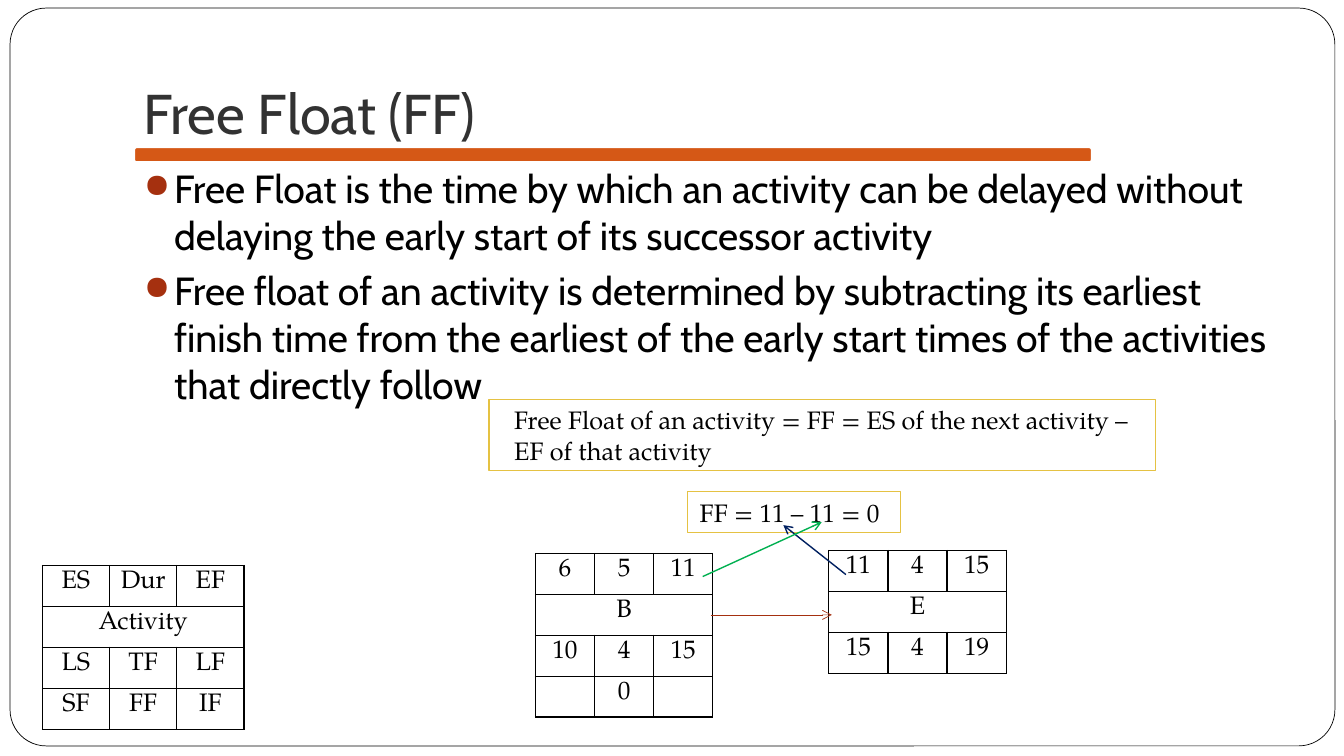
from dataclasses import dataclass

from lxml import etree
from pptx import Presentation
from pptx.dml.color import RGBColor
from pptx.enum import shapes, text
from pptx.oxml import ns, xmlchemy
from pptx.util import Inches, Pt

COLORS = {
    "black": "000000",
    "white": "FFFFFF",
    "title": "323232",
    "orange": "D55816",
    "gold": "E5C243",
    "red": "A5300F",
    "navy": "002060",
    "green": "00B050",
}
SANS = "Cabin"
SERIF = "TeX Gyre Pagella"
ROW_HEIGHT = 0.406
BULLETS = [
    "Free Float is the time by which an activity can be delayed without "
    "delaying the early start of its successor activity",
    "Free float of an activity is determined by subtracting its earliest finish time "
    "from the earliest of the early start times of the activities that directly follow",
]


@dataclass
class ActivityTable:
    left: float
    top: float
    width: float
    rows: list[list[str]]  # a row with one entry spans the whole table


@dataclass
class Formula:
    left: float
    top: float
    width: float
    height: float
    inset: float
    wording: str


@dataclass
class Arrow:
    start: tuple[float, float]
    end: tuple[float, float]
    color: str
    weight: float


TABLES = [
    ActivityTable(5.31, 5.49, 1.76, [["6", "5", "11"], ["B"], ["10", "4", "15"], ["", "0", ""]]),
    ActivityTable(0.42, 5.61, 2, [["ES", "Dur", "EF"], ["Activity"],
                                  ["LS", "TF", "LF"], ["SF", "FF", "IF"]]),
    ActivityTable(8.22, 5.46, 1.76, [["11", "4", "15"], ["E"], ["15", "4", "19"]]),
]
FORMULAS = [
    Formula(4.85, 3.96, 6.61, 0.71, 0.25,
            "Free Float of an activity = FF = ES of the next activity – EF of that activity"),
    Formula(6.82, 4.88, 2.11, 0.4, 0.12, "FF = 11 – 11 = 0"),
]
ARROWS = [
    Arrow((7.05, 6.1), (8.25, 6.1), "red", 0.5),
    Arrow((8.39, 5.7), (7.77, 5.21), "navy", 1),
    Arrow((6.97, 5.72), (8.15, 5.18), "green", 1),
]


def rgb(name: str) -> RGBColor:
    return RGBColor.from_string(COLORS[name])


def add_run(paragraph, wording: str, font: str, size: float, color: str = "black") -> None:
    run = paragraph.add_run()
    run.text = wording
    run.font.name = font
    run.font.size = Pt(size)
    run.font.color.rgb = rgb(color)


def add_block(slide, kind, left: float, top: float, width: float, height: float,
              fill: str | None, line: str, weight: float):
    shape = slide.shapes.add_shape(kind, Inches(left), Inches(top), Inches(width), Inches(height))
    shape.shadow.inherit = False
    if fill:
        shape.fill.solid()
        shape.fill.fore_color.rgb = rgb(fill)
    else:
        shape.fill.background()
    shape.line.color.rgb = rgb(line)
    shape.line.width = Pt(weight)
    return shape


def add_frame_and_bar(slide) -> None:
    rounded = shapes.MSO_SHAPE.ROUNDED_RECTANGLE
    frame = add_block(slide, rounded, 0.1, 0.08, 13.14, 7.32, "white", "black", 0.5)
    frame.adjustments[0] = 0.049
    add_block(slide, rounded, 1.33, 1.46, 9.5, 0.15, "orange", "white", 1.5)


def add_title(slide) -> None:
    box = slide.shapes.add_textbox(Inches(1.33), Inches(0.3), Inches(11.33), Inches(1.25))
    frame = box.text_frame
    frame.word_wrap = True
    frame.vertical_anchor = text.MSO_ANCHOR.BOTTOM
    frame.margin_bottom = Inches(0.1)
    add_run(frame.paragraphs[0], "Free Float (FF)", SANS, 40, "title")


def set_bullet(paragraph) -> None:
    properties = paragraph._p.get_or_add_pPr()
    properties.set("marL", str(Inches(0.3)))
    properties.set("indent", str(Inches(-0.3)))
    color = etree.SubElement(properties, ns.qn("a:buClr"))
    etree.SubElement(color, ns.qn("a:srgbClr"), val=COLORS["red"])
    etree.SubElement(properties, ns.qn("a:buSzPct"), val="85000")
    etree.SubElement(properties, ns.qn("a:buChar"), char="●")


def add_body(slide) -> None:
    box = slide.shapes.add_textbox(Inches(1.33), Inches(1.58), Inches(11.33), Inches(5))
    frame = box.text_frame
    frame.word_wrap = True
    for index, wording in enumerate(BULLETS):
        paragraph = frame.add_paragraph() if index else frame.paragraphs[0]
        paragraph.space_before = Pt(5.8)
        set_bullet(paragraph)
        add_run(paragraph, wording, SANS, 28)


def set_borders(cell) -> None:
    properties = cell._tc.get_or_add_tcPr()
    for position, side in enumerate(("lnL", "lnR", "lnT", "lnB")):
        line = etree.Element(ns.qn(f"a:{side}"), w=str(Pt(1)))
        fill = etree.SubElement(line, ns.qn("a:solidFill"))
        etree.SubElement(fill, ns.qn("a:srgbClr"), val=COLORS["black"])
        properties.insert(position, line)


def add_activity_table(slide, spec: ActivityTable) -> None:
    row_count, column_count = len(spec.rows), len(spec.rows[0])
    table = slide.shapes.add_table(
        row_count, column_count, Inches(spec.left), Inches(spec.top),
        Inches(spec.width), Inches(ROW_HEIGHT * row_count)).table
    table.first_row = False
    table.horz_banding = False
    for row, entries in enumerate(spec.rows):
        if len(entries) == 1:
            table.cell(row, 0).merge(table.cell(row, column_count - 1))
        for column in range(column_count):
            cell = table.cell(row, column)
            cell.fill.background()
            set_borders(cell)
            paragraph = cell.text_frame.paragraphs[0]
            paragraph.alignment = text.PP_ALIGN.CENTER
            paragraph.font.size = Pt(18)
            if column < len(entries) and entries[column]:
                add_run(paragraph, entries[column], SERIF, 18)


def add_formula(slide, spec: Formula) -> None:
    box = add_block(slide, shapes.MSO_SHAPE.RECTANGLE, spec.left, spec.top,
                    spec.width, spec.height, None, "gold", 0.75)
    frame = box.text_frame
    frame.word_wrap = True
    frame.vertical_anchor = text.MSO_ANCHOR.MIDDLE
    frame.margin_left = Inches(spec.inset)
    frame.paragraphs[0].alignment = text.PP_ALIGN.LEFT
    add_run(frame.paragraphs[0], spec.wording, SERIF, 18)


def add_arrow(slide, spec: Arrow) -> None:
    points = [Inches(value) for value in (*spec.start, *spec.end)]
    connector = slide.shapes.add_connector(shapes.MSO_CONNECTOR.STRAIGHT, *points)
    connector.line.color.rgb = rgb(spec.color)
    connector.line.width = Pt(spec.weight)
    etree.SubElement(connector.line._get_or_add_ln(), ns.qn("a:tailEnd"), type="arrow")
    etree.SubElement(connector._element.spPr, ns.qn("a:effectLst"))


def main() -> None:
    presentation = Presentation()
    presentation.slide_width = Inches(13.33)
    presentation.slide_height = Inches(7.5)
    slide = presentation.slides.add_slide(presentation.slide_layouts[6])
    add_frame_and_bar(slide)
    add_title(slide)
    add_body(slide)
    for table in TABLES:
        add_activity_table(slide, table)
    for formula in FORMULAS:
        add_formula(slide, formula)
    for arrow in ARROWS:
        add_arrow(slide, arrow)
    presentation.save("out.pptx")


if __name__ == "__main__":
    main()
